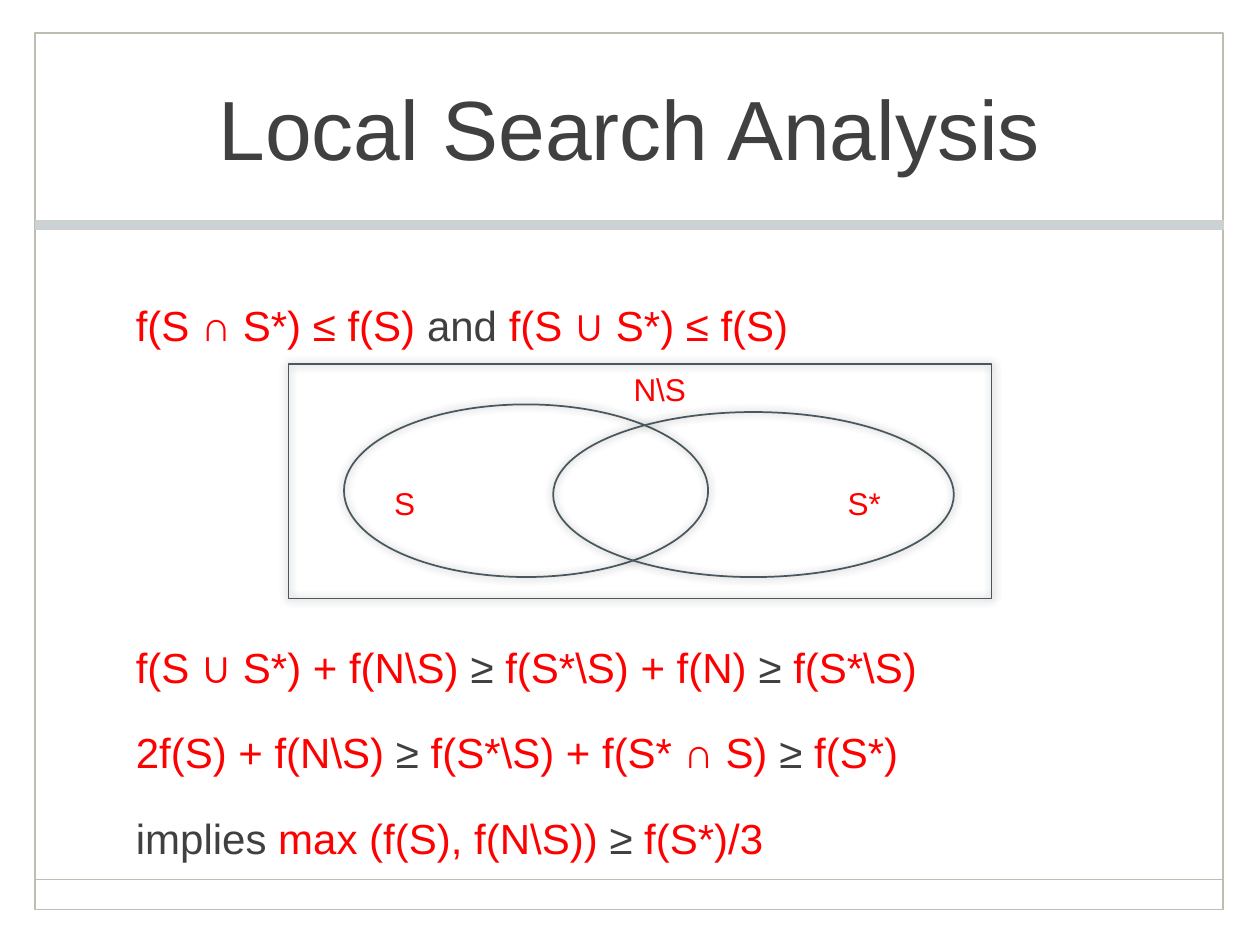
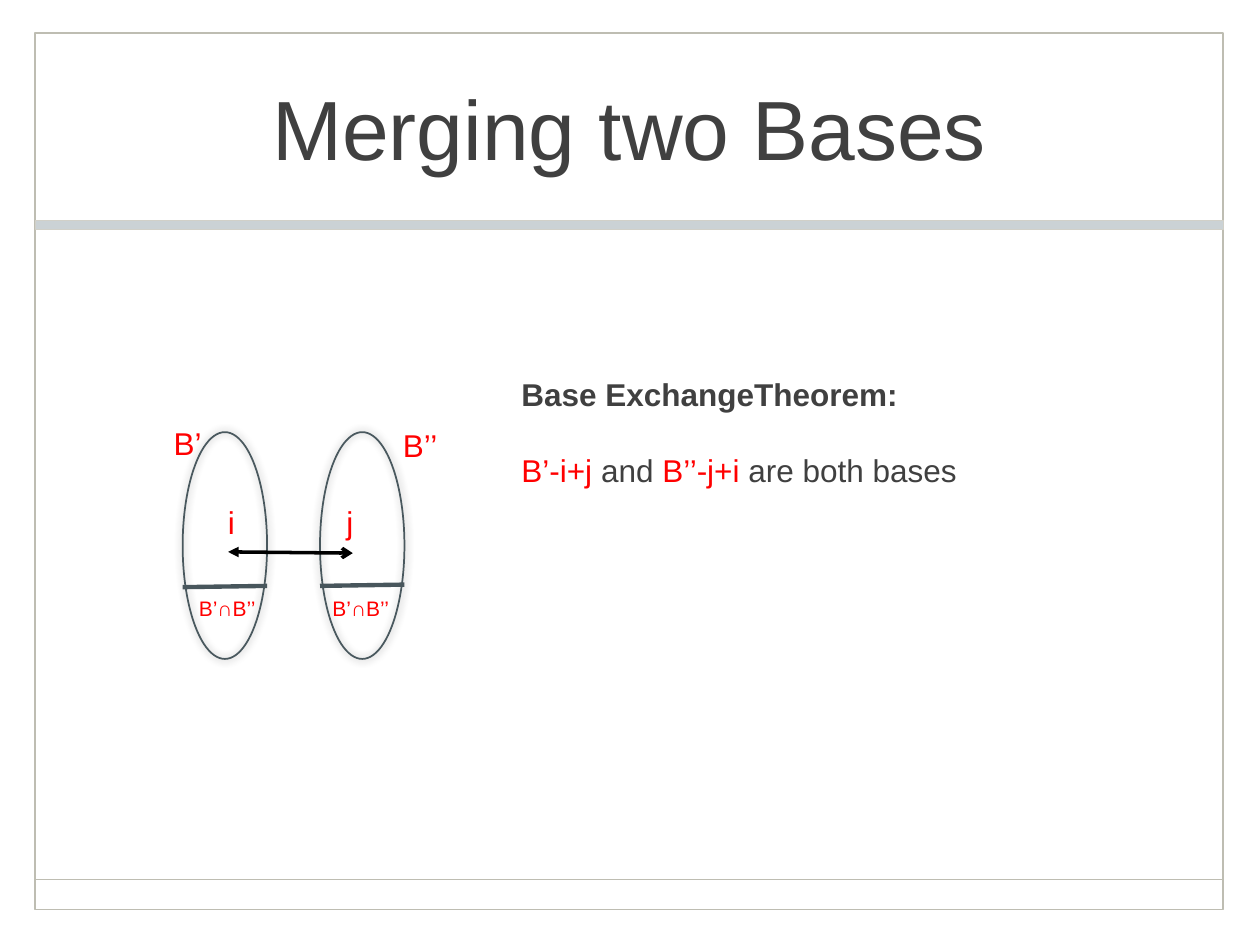
from collections import namedtuple
from itertools import cycle

from pptx import Presentation
from pptx.dml.color import RGBColor
from pptx.enum.shapes import MSO_CONNECTOR as Connector, MSO_SHAPE as Shape
from pptx.enum.text import MSO_ANCHOR as Anchor, PP_ALIGN as Align
from pptx.oxml import parse_xml
from pptx.oxml.ns import nsdecls, qn
from pptx.oxml.xmlchemy import OxmlElement
from pptx.util import Inches, Pt

COLUMNS, ROWS = 100, 75
CELL = Inches(0.1)
FONT = "Arial"
INK, RED, BLACK = "404040", "FF0000", "000000"
FRAME, BAND, BAND_EDGE = "BEBDB2", "CBD2D5", "D1D0C8"
OUTLINE, DIVIDER = "49585E", "48565C"

Box = namedtuple("Box", "left top width height")
PANEL = Box(2.8, 2.6, 94.3, 69.6)


def color(hex_string):
    return RGBColor.from_string(hex_string)


def cells(*counts):
    return [round(count * CELL) for count in counts]


def inside(box, left, top, width, height):
    return Box(box.left + left, box.top + top, width, height)


def add_text(page, box, *paragraphs, size=18, colors=(RED, INK), bold=False,
             align=Align.LEFT, anchor=Anchor.TOP, gap=0):
    frame = page.shapes.add_textbox(*cells(*box)).text_frame
    frame.word_wrap = True
    frame.vertical_anchor = anchor
    for index, paragraph in enumerate(paragraphs):
        para = frame.add_paragraph() if index else frame.paragraphs[0]
        para.alignment = align
        para.space_before = Pt(gap if index else 0)
        for words, hex_string in zip(paragraph.split("|"), cycle(colors)):
            if words:
                span = para.add_run()
                span.text = words
                span.font.name = FONT
                span.font.size = Pt(size)
                span.font.bold = bold
                span.font.color.rgb = color(hex_string)


def add_outline(page, kind, box, line=OUTLINE, weight=1, fill=None, shadow=False):
    shape = page.shapes.add_shape(kind, *cells(*box))
    shape.shadow.inherit = False
    if fill:
        shape.fill.solid()
        shape.fill.fore_color.rgb = color(fill)
    else:
        shape.fill.background()
    shape.line.color.rgb = color(line)
    shape.line.width = Pt(weight)
    if shadow:
        effects = shape._element.spPr.find(qn("a:effectLst"))
        effects.append(parse_xml(
            f'<a:outerShdw {nsdecls("a")} blurRad="{Pt(5)}" dist="0" dir="0">'
            f'<a:srgbClr val="{BLACK}"><a:alpha val="40000"/></a:srgbClr>'
            '</a:outerShdw>'))


def add_line(page, box, start, end, line, weight, head=None, tail=None):
    points = [box.left + start[0], box.top + start[1],
              box.left + end[0], box.top + end[1]]
    connector = page.shapes.add_connector(Connector.STRAIGHT, *cells(*points))
    connector.line.color.rgb = color(line)
    connector.line.width = Pt(weight)
    properties = connector._element.spPr
    for tag, kind in (("a:headEnd", head), ("a:tailEnd", tail)):
        if kind:
            arrowhead = OxmlElement(tag)
            arrowhead.set("type", kind)
            properties.find(qn("a:ln")).append(arrowhead)
    properties.append(OxmlElement("a:effectLst"))


def add_page(deck, title):
    page = deck.slides.add_slide(deck.slide_layouts[6])
    add_outline(page, Shape.RECTANGLE, PANEL, line=FRAME)
    add_line(page, PANEL, (0, 67.2), (PANEL.width, 67.2), FRAME, 1)
    add_outline(page, Shape.RECTANGLE, inside(PANEL, 0, 14.9, PANEL.width, 0.7),
                line=BAND_EDGE, weight=0.25, fill=BAND)
    add_text(page, inside(PANEL, 7, 0.1, 80.3, 14.7), title, size=48,
             colors=(INK,), align=Align.CENTER, anchor=Anchor.MIDDLE)
    return page


def draw_venn(page, box):
    for oval in ((4.4, 3.2, 28.9, 13.7), (21, 3.8, 31.8, 13.1)):
        add_outline(page, Shape.OVAL, inside(box, *oval), shadow=True)
    for label, left, top in (("S", 7.4, 9), ("N\\S", 26.4, 0), ("S*", 43.4, 9)):
        add_text(page, inside(box, left, top, 7, 4), label)
    add_outline(page, Shape.RECTANGLE, box, shadow=True)


def draw_bases(page, box):
    oval_width, step = 6.7, 10.9
    for left, slip in ((0, 0), (step, 0.1)):
        add_outline(page, Shape.OVAL, inside(box, left, 0, oval_width, box.height),
                    shadow=True)
        add_line(page, box, (left, 12.3 - slip), (left + oval_width, 12.2 - slip),
                 DIVIDER, 2.5)
    add_line(page, box, (3.6, 9.5), (13.5, 9.6), BLACK, 2,
             head="triangle", tail="arrow")
    for label, left, top in (("B’", -1.7, -1.1), ("B’’", 16.5, -1),
                             ("i", 2.6, 5.1), ("j", 12, 5.1)):
        add_text(page, inside(box, left, top, 5.6, 4), label)
    for left in (0.3, step):
        add_text(page, inside(box, left, 12.5, 8.3, 3), "B’∩B’’", size=12)


def draw_theorem(page, box):
    add_text(page, inside(box, 0, 0, box.width, 4), "Base ExchangeTheorem:",
             colors=(INK,), bold=True)
    add_text(page, inside(box, 0, 6, box.width, 4),
             "B’-i+j| and |B’’-j+i| are both bases")


def add_analysis(deck):
    page = add_page(deck, "Local Search Analysis")
    add_text(page, Box(9.8, 23.3, 80.3, 5),
             "f(S ∩ S*) ≤ f(S) |and |f(S ∪ S*) ≤ f(S)", size=24)
    add_text(page, Box(9.8, 50.4, 80.3, 18),
             "f(S ∪ S*) + f(N\\S) |≥ |f(S*\\S) + f(N) |≥ |f(S*\\S)",
             "2f(S) + f(N\\S)| ≥ |f(S*\\S) + f(S* ∩ S) |≥ |f(S*)",
             "|implies| max (f(S), f(N\\S)) |≥ |f(S*)/3",
             size=24, gap=20)
    draw_venn(page, Box(22.9, 28.9, 55.8, 18.6))


def add_merging(deck):
    page = add_page(deck, "Merging two Bases")
    draw_bases(page, Box(14.5, 34.3, 17.6, 18))
    draw_theorem(page, Box(40.4, 29.3, 45.4, 10.1))


def main():
    deck = Presentation()
    deck.slide_width, deck.slide_height = cells(COLUMNS, ROWS)
    add_analysis(deck)
    add_merging(deck)
    deck.save("out.pptx")


if __name__ == "__main__":
    main()
